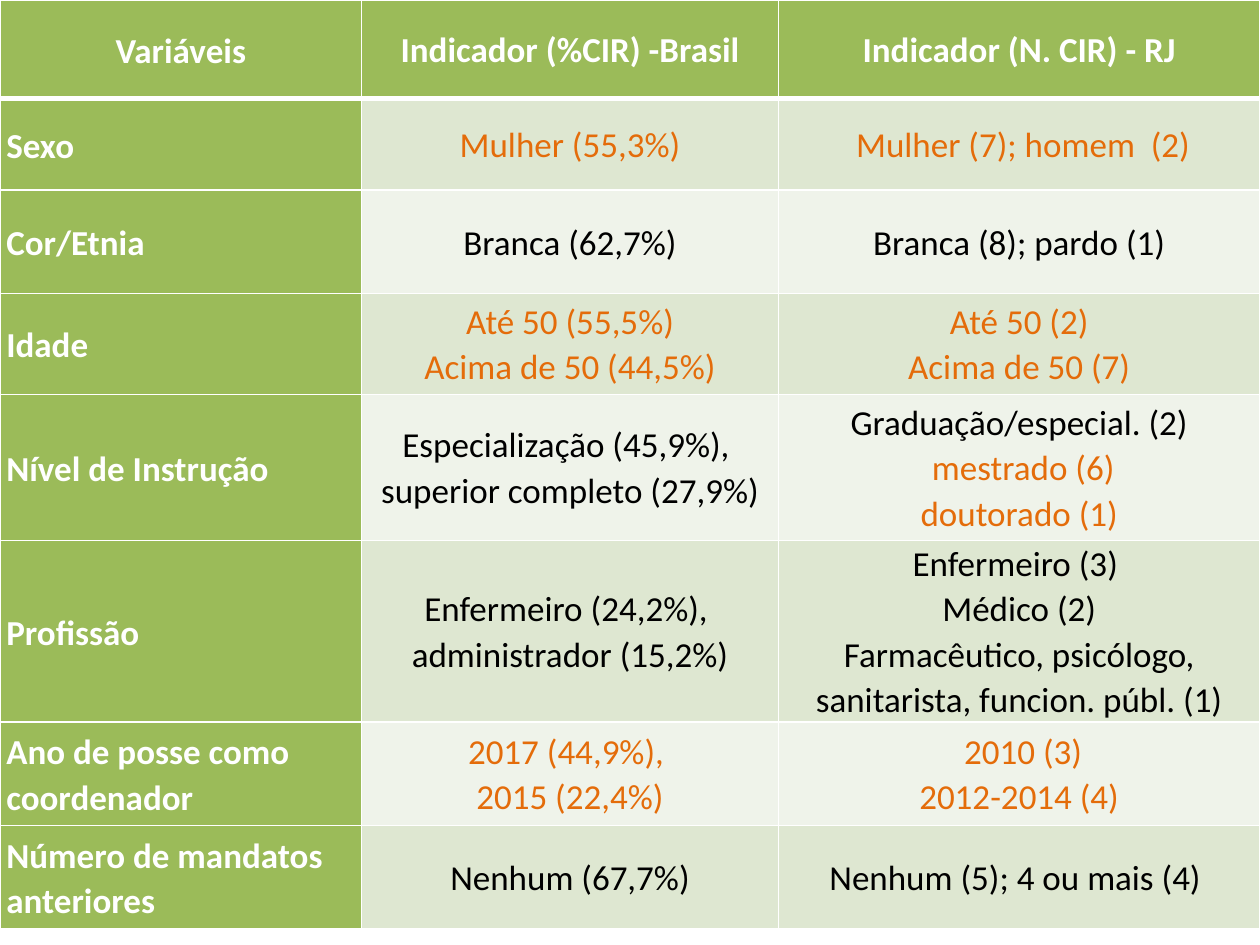
from lxml import etree
from pptx import Presentation
from pptx.dml.color import RGBColor
from pptx.enum.text import MSO_ANCHOR, PP_ALIGN
from pptx.oxml.ns import qn
from pptx.util import Inches, Pt

MIDDLE = MSO_ANCHOR.MIDDLE
LEFT, CENTER = PP_ALIGN.LEFT, PP_ALIGN.CENTER

THEME = {
    "font": "Calibri", "size": 20, "line_spacing": 1.06,
    "header": "9BBB59", "bands": ("DEE7D1", "EFF3EA"),
    "label": "FFFFFF", "plain": "000000", "highlight": "E46C0A",
    "border": "FFFFFF", "border_width": 1, "header_border_width": 3,
}

COLUMN_WIDTHS = (2.87, 3.31, 3.82)
HEADERS = ("Variáveis", "Indicador (%CIR) -Brasil", "Indicador (N. CIR) - RJ")

# Row height, variable, lines for Brasil, lines for RJ; "*" marks a highlighted line.
HEADER_HEIGHT = 0.78
INDICATORS = [
    (0.73, "Sexo", ["*Mulher (55,3%)"], ["* Mulher (7); homem  (2)"]),
    (0.82, "Cor/Etnia", ["Branca (62,7%)"], ["Branca (8); pardo (1)"]),
    (0.8, "Idade", ["*Até 50 (55,5%)", "*Acima de 50 (44,5%)"],
     ["*Até 50 (2)", "*Acima de 50 (7)"]),
    (1.16, "Nível de Instrução",
     ["Especialização (45,9%), ", "superior completo (27,9%)"],
     ["Graduação/especial. (2)", "* mestrado (6)", "*doutorado (1)"]),
    (0.92, "Profissão", ["Enfermeiro (24,2%), ", "administrador (15,2%)"],
     ["Enfermeiro (3) ", "Médico (2)",
      "Farmacêutico, psicólogo, sanitarista, funcion. públ. (1)"]),
    (0.82, "Ano de posse como coordenador",
     ["*2017 (44,9%), ", "*2015 (22,4%)"], ["* 2010 (3)", "*2012-2014 (4)"]),
    (0.82, "Número de mandatos anteriores",
     ["Nenhum (67,7%)"], ["Nenhum (5); 4 ou mais (4) "]),
]


def write_line(paragraph, text, color, bold=False, align=CENTER):
    paragraph.alignment = align
    paragraph.line_spacing = THEME["line_spacing"]
    run = paragraph.add_run()
    run.text = text
    run.font.name = THEME["font"]
    run.font.size = Pt(THEME["size"])
    run.font.bold = bold
    run.font.color.rgb = RGBColor.from_string(color)


def set_borders(cell, **widths):
    properties = cell._tc.get_or_add_tcPr()
    for side in "LRTB":
        width = widths.get(side, THEME["border_width"])
        line = etree.SubElement(properties, qn(f"a:ln{side}"), w=str(Pt(width)))
        fill = etree.SubElement(line, qn("a:solidFill"))
        etree.SubElement(fill, qn("a:srgbClr"), val=THEME["border"])


def format_cell(cell, fill, padded=False, **border_widths):
    set_borders(cell, **border_widths)
    cell.fill.solid()
    cell.fill.fore_color.rgb = RGBColor.from_string(fill)
    cell.vertical_anchor = MIDDLE
    cell.margin_left = cell.margin_right = Inches(0.05 if padded else 0)
    cell.margin_top = Inches(0.01 if padded else 0)
    cell.margin_bottom = 0


def write_label(cell, text, align):
    write_line(cell.text_frame.paragraphs[0], text, THEME["label"],
               bold=True, align=align)


def write_values(cell, lines):
    frame = cell.text_frame
    for index, line in enumerate(lines):
        paragraph = frame.add_paragraph() if index else frame.paragraphs[0]
        color = THEME["highlight" if line.startswith("*") else "plain"]
        write_line(paragraph, line.removeprefix("*"), color)


def main():
    presentation = Presentation()
    presentation.slide_width = Inches(10)
    presentation.slide_height = Inches(7.5)
    slide = presentation.slides.add_slide(presentation.slide_layouts[6])

    heights = [HEADER_HEIGHT] + [indicator[0] for indicator in INDICATORS]
    table = slide.shapes.add_table(
        len(heights), len(HEADERS), 0, 0,
        Inches(sum(COLUMN_WIDTHS)), Inches(sum(heights))).table
    for column, width in zip(table.columns, COLUMN_WIDTHS):
        column.width = Inches(width)
    for row, height in zip(table.rows, heights):
        row.height = Inches(height)

    thick = THEME["header_border_width"]
    for column, header in enumerate(HEADERS):
        cell = table.cell(0, column)
        format_cell(cell, THEME["header"], padded=column == 0, B=thick)
        write_label(cell, header, CENTER)

    for row, (_, variable, *values) in enumerate(INDICATORS, start=1):
        top = {"T": thick} if row == 1 else {}
        label = table.cell(row, 0)
        format_cell(label, THEME["header"], padded=True, **top)
        write_label(label, variable, LEFT)
        for column, lines in enumerate(values, start=1):
            cell = table.cell(row, column)
            format_cell(cell, THEME["bands"][(row - 1) % 2], **top)
            write_values(cell, lines)

    presentation.save("out.pptx")


if __name__ == "__main__":
    main()
